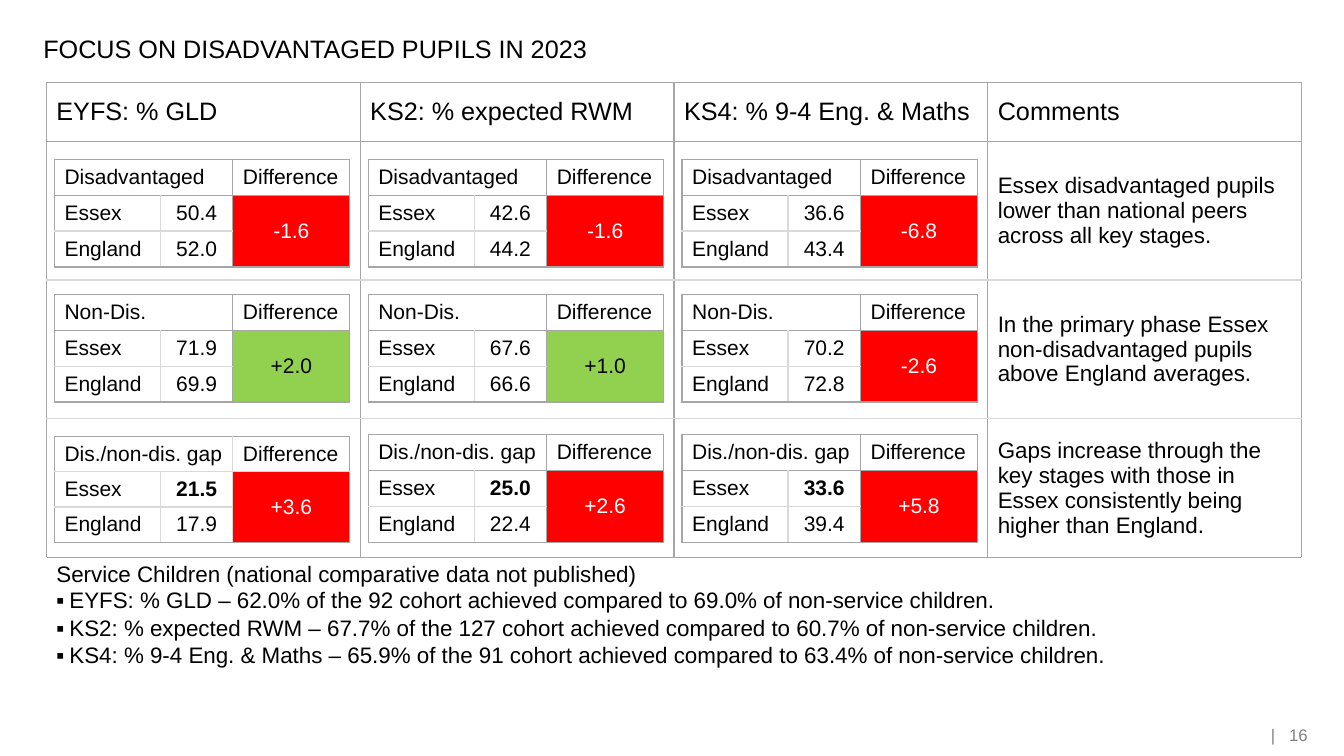
from dataclasses import dataclass
from lxml import etree
from pptx import Presentation
from pptx.dml.color import RGBColor
from pptx.enum.text import MSO_ANCHOR, PP_ALIGN
from pptx.oxml.ns import qn
from pptx.util import Inches, Pt

LEFT, CENTER, RIGHT = PP_ALIGN.LEFT, PP_ALIGN.CENTER, PP_ALIGN.RIGHT
TOP, MIDDLE = MSO_ANCHOR.TOP, MSO_ANCHOR.MIDDLE
BULLET = "▪ "


@dataclass(frozen=True)
class Theme:
    font: str = "Arial"
    bullet_font: str = "Calibri"
    ink: str = "000000"
    white: str = "FFFFFF"
    muted: str = "808080"
    line: str = "A6A6A6"
    soft: str = "D9D9D9"
    worse: str = "FF0000"
    better: str = "92D050"
    head: int = 18
    body: int = 16
    data: int = 15
    small: int = 12


T = Theme()


def write(tf, paragraphs, size, color=T.ink, bold=False, align=LEFT):
    for i, pieces in enumerate(paragraphs):
        p = tf.add_paragraph() if i else tf.paragraphs[0]
        p.alignment = align
        for piece in pieces:
            r = p.add_run()
            r.text = piece
            r.font.name = T.bullet_font if piece == BULLET else T.font
            r.font.size = Pt(size)
            r.font.bold = bold
            r.font.color.rgb = RGBColor.from_string(color)


def add_grid(x, y, widths, heights, merges, verticals, horizontals):
    frame = s.shapes.add_table(
        len(heights), len(widths), Inches(x), Inches(y), Inches(sum(widths)), Inches(sum(heights))
    )
    table = frame.table
    table.first_row = table.horz_banding = False
    for column, width in zip(table.columns, widths):
        column.width = Inches(width)
    for row, height in zip(table.rows, heights):
        row.height = Inches(height)
    for first, last in merges:
        table.cell(*first).merge(table.cell(*last))
    for i in range(len(heights)):
        for j in range(len(widths)):
            cell = table.cell(i, j)
            cell.vertical_anchor = MIDDLE
            edges = {
                "a:lnL": verticals[i][j],
                "a:lnR": verticals[i][j + cell.span_width],
                "a:lnT": horizontals[i],
                "a:lnB": horizontals[i + cell.span_height],
            }
            for tag, color in edges.items():
                ln = etree.SubElement(cell._tc.get_or_add_tcPr(), qn(tag), w=str(Pt(1)))
                fill = etree.SubElement(ln, qn("a:solidFill"))
                etree.SubElement(fill, qn("a:srgbClr"), val=color)
            cell.fill.background()
    return table


prs = Presentation()
prs.slide_width, prs.slide_height = Inches(13.33), Inches(7.5)
s = prs.slides.add_slide(prs.slide_layouts[6])

banner = add_grid(0.33, 0.3, [12.73], [0.46], [], [[T.white] * 2], [T.white] * 2)
title = banner.cell(0, 0)
title.vertical_anchor = TOP
write(title.text_frame, [["FOCUS ON DISADVANTAGED PUPILS IN 2023"]], T.head)

LEFT_EDGE, TOP_EDGE, HEAD_ROW = 0.46, 0.82, 0.58
COL, ROW = 12.45 / 4, (6.09 - HEAD_ROW) / 4
headings = ["EYFS: % GLD", "KS2: % expected RWM", "KS4: % 9-4 Eng. & Maths", "Comments"]
comments = [
    "Essex disadvantaged pupils lower than national peers across all key stages.",
    "In the primary phase Essex non-disadvantaged pupils above England averages.",
    "Gaps increase through the key stages with those in Essex consistently being higher than England.",
]
service_children = [
    ["Service Children (national comparative data not published)"],
    [BULLET, "EYFS: % GLD – 62.0% of the 92 cohort achieved compared to 69.0% of non-service children."],
    [BULLET, "KS2: % expected RWM – 67.7% of the 127 cohort achieved compared to 60.7% of non-service children."],
    [BULLET, "KS4: % 9-4 Eng. & Maths – 65.9% of the 91 cohort achieved compared to 63.4% of non-service children."],
]

overview = add_grid(
    LEFT_EDGE, TOP_EDGE, [COL] * 4, [HEAD_ROW] + [ROW] * 4, [((4, 0), (4, 3))],
    [[T.line] * 5] * 4 + [[T.white] * 5],
    [T.line, T.line, T.soft, T.soft, T.line, T.white],
)
for j, heading in enumerate(headings):
    write(overview.cell(0, j).text_frame, [[heading]], T.head)
for i, comment in enumerate(comments, 1):
    write(overview.cell(i, 3).text_frame, [[comment]], T.body)
service_cell = overview.cell(4, 0)
service_cell.vertical_anchor = TOP
write(service_cell.text_frame, service_children, T.body)

groups = [
    ("Disadvantaged", 1.58, [
        ("50.4", "52.0", "-1.6", T.worse),
        ("42.6", "44.2", "-1.6", T.worse),
        ("36.6", "43.4", "-6.8", T.worse),
    ]),
    ("Non-Dis.", 2.92, [
        ("71.9", "69.9", "+2.0", T.better),
        ("67.6", "66.6", "+1.0", T.better),
        ("70.2", "72.8", "-2.6", T.worse),
    ]),
    ("Dis./non-dis. gap", 4.31, [
        ("21.5", "17.9", "+3.6", T.worse),
        ("25.0", "22.4", "+2.6", T.worse),
        ("33.6", "39.4", "+5.8", T.worse),
    ]),
]
for group, top, stages in groups:
    is_gap = group == "Dis./non-dis. gap"
    for j, (essex, england, difference, status) in enumerate(stages):
        is_soft = is_gap and j == 0
        inner = T.soft if is_soft else T.line
        height = 1.05 if is_soft else 1.07
        scores = add_grid(
            LEFT_EDGE + 0.08 + j * COL, top + 0.02 * is_soft,
            [1.05, 0.72, 1.16], [height / 3] * 3,
            [((0, 0), (0, 1)), ((1, 2), (2, 2))],
            [[T.line, T.soft, inner, T.line]] * 3,
            [T.line, inner, T.soft, T.line],
        )
        write(scores.cell(0, 0).text_frame, [[group]], T.data)
        write(scores.cell(0, 2).text_frame, [["Difference"]], T.data)
        for i, (area, value) in enumerate([("Essex", essex), ("England", england)], 1):
            write(scores.cell(i, 0).text_frame, [[area]], T.data)
            write(scores.cell(i, 1).text_frame, [[value]], T.data, bold=is_gap and i == 1, align=CENTER)
        result = scores.cell(1, 2)
        result.fill.solid()
        result.fill.fore_color.rgb = RGBColor.from_string(status)
        color = T.white if status == T.worse else T.ink
        write(result.text_frame, [[difference]], T.data, color, align=CENTER)

page = s.shapes.add_textbox(*map(Inches, (12.12, 7.21, 0.85, 0.15)))
tf = page.text_frame
tf.word_wrap = True
tf.vertical_anchor = MIDDLE
tf.margin_right = 0
write(tf, [["| ", "16"]], T.small, T.muted, align=RIGHT)
tf.paragraphs[0].runs[0].font._element.set("spc", "330")

prs.save("out.pptx")
